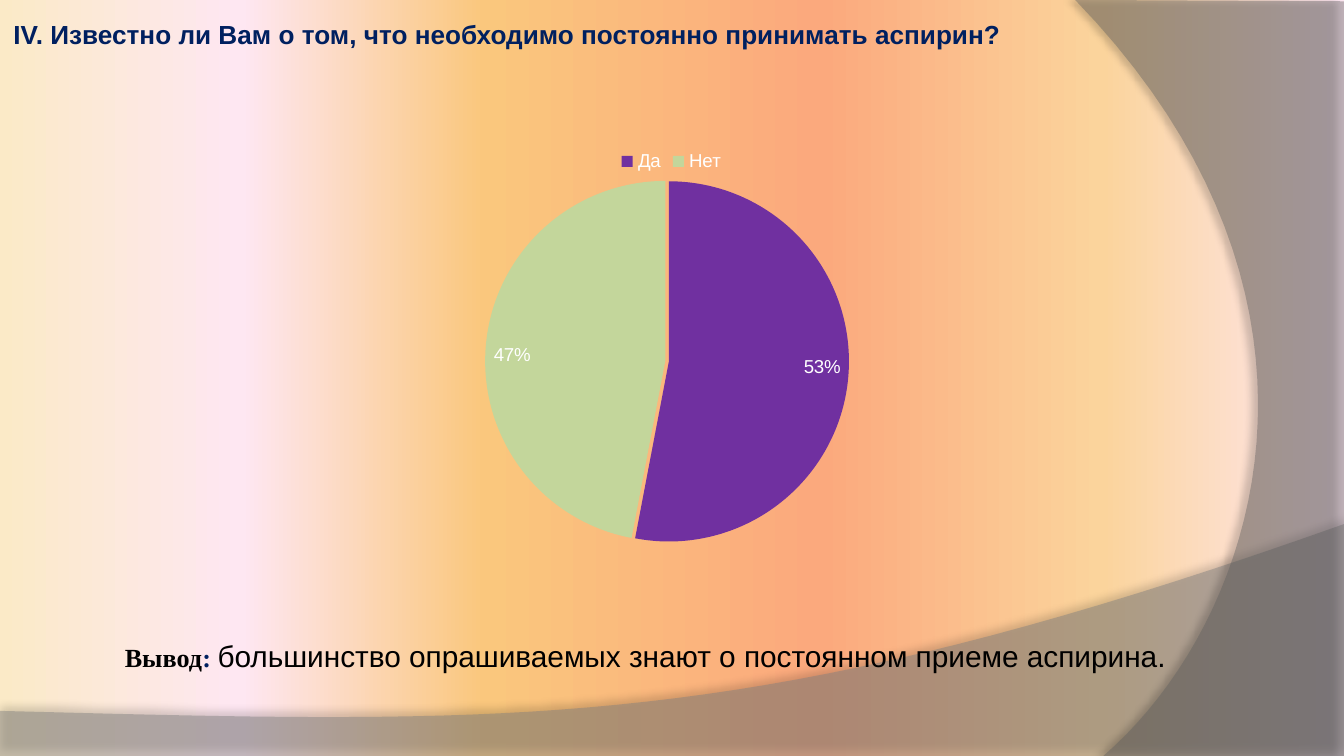
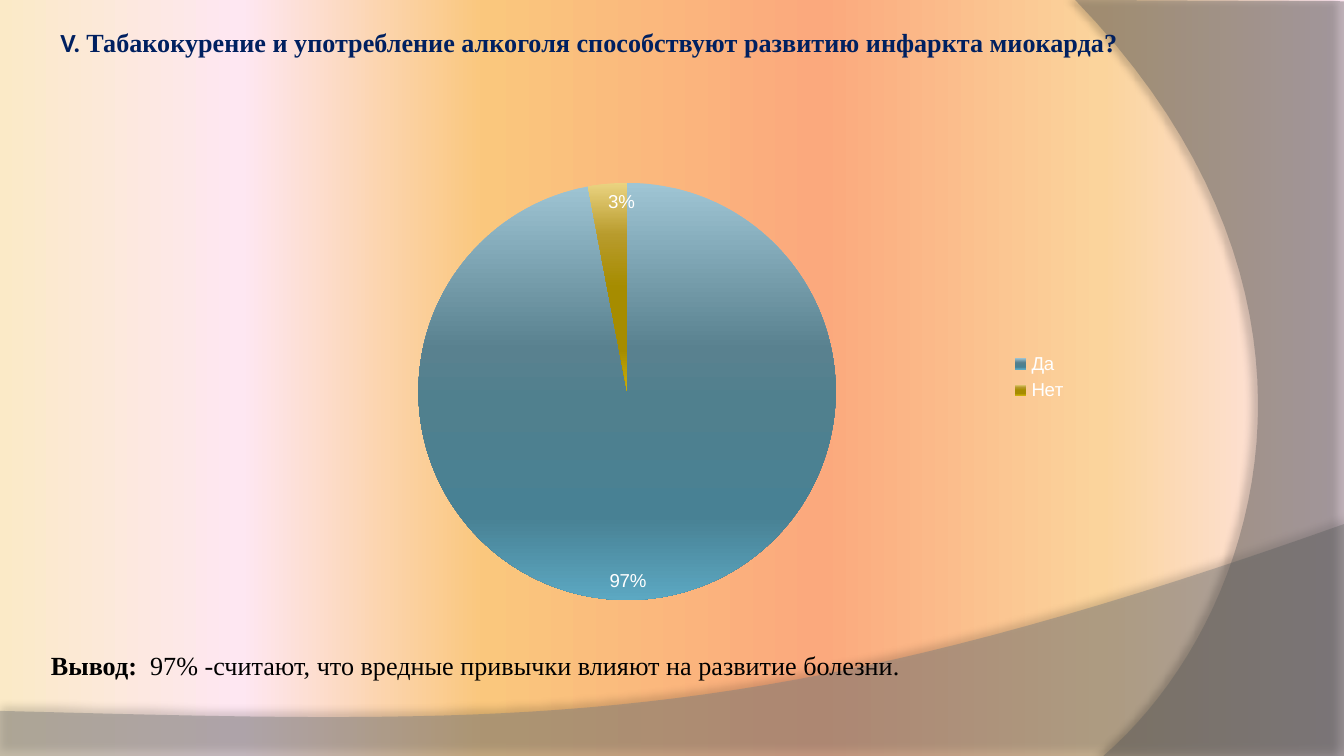
from pptx import Presentation
from pptx import util as u
from pptx.chart.data import CategoryChartData
from pptx.dml.color import RGBColor
from pptx.enum import chart as charts, text
from pptx.oxml import parse_xml
from pptx.oxml.ns import nsdecls, qn

WIDTH, HEIGHT = u.Inches(10), u.Inches(5.625)
NAVY, BLACK, WHITE = "002060", "000000", "FFFFFF"
SANS, SERIF = "Arial", "Times New Roman"
BACKDROP = [(0, "FBEAC7"), (18, "FEE7F2"), (36, "FAC77D"),
            (61, "FBA97D"), (82, "FBD49C"), (100, "FEE7F2")]
BLUE_SHADE = [(0, "9FC5D4"), (40, "59818F"), (53, "50808E"),
              (80, "488194"), (100, "5CA8C2")]
GOLD_SHADE = [(0, "EAD381"), (25, "B89B2C"), (50, "A68C00"),
              (80, "A68C00"), (100, "CCAF0A")]


def color(value):
    return RGBColor.from_string(value)


def across(share):
    return round(WIDTH * share / 100)


def down(share):
    return round(HEIGHT * share / 100)


def area(left, top, width, height):
    """Turn percentages of the slide into a frame."""
    return across(left), down(top), across(width), down(height)


def fill_gradient(fill, stops, angle):
    fill.gradient()
    fill.gradient_angle = angle
    marks = "".join(
        f'<a:gs pos="{share * 1000}"><a:srgbClr val="{value}"/></a:gs>'
        for share, value in stops)
    old = fill._xPr.find(qn("a:gradFill")).find(qn("a:gsLst"))
    old.getparent().replace(
        old, parse_xml(f'<a:gsLst {nsdecls("a")}>{marks}</a:gsLst>'))


def curve(start, first, second, end, steps=40):
    """Points along a cubic curve, without its start."""
    for step in range(1, steps + 1):
        t = step / steps
        weights = ((1 - t) ** 3, 3 * t * (1 - t) ** 2,
                   3 * t ** 2 * (1 - t), t ** 3)
        yield tuple(sum(w * point[axis] for w, point
                        in zip(weights, (start, first, second, end)))
                    for axis in (0, 1))


def add_wave(page, points, fill, opacity, shadow_opacity, distance, direction):
    corners = [(across(x), down(y)) for x, y in points]
    builder = page.shapes.build_freeform(*corners[0])
    builder.add_line_segments(corners[1:], close=True)
    wave = builder.convert_to_shape()
    wave.fill.solid()
    wave.fill.fore_color.rgb = color(fill)
    wave.element.spPr.find(f'.//{qn("a:srgbClr")}').append(
        parse_xml(f'<a:alpha {nsdecls("a")} val="{opacity * 1000}"/>'))
    wave.line.fill.background()
    wave.shadow.inherit = False
    wave.element.spPr.find(qn("a:effectLst")).append(parse_xml(
        f'<a:outerShdw {nsdecls("a")} blurRad="{u.Pt(4)}" '
        f'dist="{u.Pt(distance)}" dir="{direction * 60000}" '
        f'algn="ctr" rotWithShape="0"><a:srgbClr val="{BLACK}">'
        f'<a:alpha val="{shadow_opacity * 1000}"/></a:srgbClr></a:outerShdw>'))
    return wave


def dress_master(deck, page):
    """Give the master its gradient and both waves, drawn by way of a page."""
    master = deck.slide_master
    fill_gradient(master.background.fill, BACKDROP, 0)
    bottom = [(0, 94.04), (0, 100), (100, 100), (100, 69.33),
              *curve((100, 69.33), (55.9, 97.24), (39.1, 95.82), (0, 94.04))]
    side = [(100, 0.18), (100, 100), (82.1, 100),
            *curve((82.1, 100), (93.5, 82.49), (101.8, 40), (80, 0))]
    waves = [add_wave(page, bottom, "7F7F7F", 45, 35, 3.5, 270),
             add_wave(page, side, "5E5E5E", 40, 45, 4, 180)]
    for position, wave in enumerate(waves, start=2):
        master.shapes.element.insert(position, wave.element)


def write_line(box, spans):
    frame = box.text_frame
    frame.word_wrap = False
    frame.auto_size = text.MSO_AUTO_SIZE.SHAPE_TO_FIT_TEXT
    frame.vertical_anchor = text.MSO_ANCHOR.MIDDLE
    para = frame.paragraphs[0]
    para.alignment = text.PP_ALIGN.LEFT
    for words, font, size, value, bold in spans:
        span = para.add_run()
        span.text = words
        span.font.name, span.font.size = font, u.Pt(size)
        span.font.color.rgb, span.font.bold = color(value), bold


def add_title(page, frame, spans):
    title = page.shapes.title
    title.left, title.top, title.width, title.height = frame
    write_line(title, spans)


def add_conclusion(page, frame, spans):
    write_line(page.shapes.add_textbox(*frame), spans)


def set_plot_layout(chart, x, y, w, h):
    plot_area = chart._chartSpace.chart.plotArea
    for old in plot_area.findall(qn("c:layout")):
        plot_area.remove(old)
    sizes = "".join(f'<c:{key} val="{value}"/>' for key, value
                    in zip("xywh", (x, y, w, h)))
    plot_area.insert(0, parse_xml(
        f'<c:layout {nsdecls("c")}><c:manualLayout>'
        '<c:layoutTarget val="inner"/><c:xMode val="edge"/>'
        f'<c:yMode val="edge"/>{sizes}</c:manualLayout></c:layout>'))


def add_answer_pie(page, frame, values, fills, legend_side, layout, explosion=0):
    data = CategoryChartData()
    data.categories = ["Да", "Нет"]
    data.add_series("Series 1", values)
    chart = page.shapes.add_chart(
        charts.XL_CHART_TYPE.PIE, *frame, data).chart
    chart.has_title = False
    chart.font.name, chart.font.size = SANS, u.Pt(10)
    chart.font.color.rgb = color(WHITE)
    chart.has_legend = True
    chart.legend.position = legend_side
    chart.legend.include_in_layout = False
    set_plot_layout(chart, *layout)

    plot = chart.plots[0]
    plot.vary_by_categories = True
    series = plot.series[0]
    for index, fill in enumerate(fills):
        slice_fill = series.points[index].format.fill
        if isinstance(fill, str):
            slice_fill.solid()
            slice_fill.fore_color.rgb = color(fill)
        else:
            fill_gradient(slice_fill, fill, 270)
    if explosion:
        series._element.find(qn("c:dPt")).addprevious(
            parse_xml(f'<c:explosion {nsdecls("c")} val="{explosion}"/>'))
    labels = series.data_labels
    labels.show_percentage, labels.show_value = True, False
    labels.number_format, labels.number_format_is_linked = "0%", False
    labels.position = charts.XL_LABEL_POSITION.INSIDE_END


def main():
    deck = Presentation()
    deck.slide_width, deck.slide_height = WIDTH, HEIGHT
    title_only = deck.slide_layouts[5]
    aspirin, habits = (deck.slides.add_slide(title_only) for _ in range(2))
    dress_master(deck, aspirin)

    add_title(aspirin, area(0, 1.42, 76, 6.04), [
        ("IV. Известно ли Вам о том, что необходимо постоянно принимать "
         "аспирин?", SANS, 14, NAVY, True)])
    add_answer_pie(aspirin, area(19, 17.96, 61.9, 64.18), (53, 47),
                   ("7030A0", "C3D69B"), charts.XL_LEGEND_POSITION.TOP,
                   (0.01, 0.09, 0.97, 0.75), explosion=1)
    add_conclusion(aspirin, area(8.3, 83.38, 80.5, 6.58), [
        ("Вывод", SERIF, 14, BLACK, True),
        (": ", SERIF, 14, NAVY, True),
        ("большинство опрашиваемых знают о постоянном приеме аспирина.",
         SANS, 16, BLACK, False)])

    add_title(habits, area(3.5, 2.49, 81.4, 6.04), [
        ("V. ", "Calibri", 14, NAVY, True),
        ("Табакокурение и употребление алкоголя способствуют развитию "
         "инфаркта миокарда?", SERIF, 14, NAVY, True)])
    add_answer_pie(habits, area(18.5, 17.78, 61.9, 64.18), (97, 3),
                   (BLUE_SHADE, GOLD_SHADE), charts.XL_LEGEND_POSITION.RIGHT,
                   (0.2, 0.1, 0.51, 0.86))
    add_conclusion(habits, area(2.8, 84.98, 66.2, 6.04), [
        ("Вывод:", SERIF, 14, BLACK, True),
        ("  97% -считают, что вредные привычки влияют на развитие болезни.",
         SERIF, 14, BLACK, False)])

    deck.save("out.pptx")


if __name__ == "__main__":
    main()
